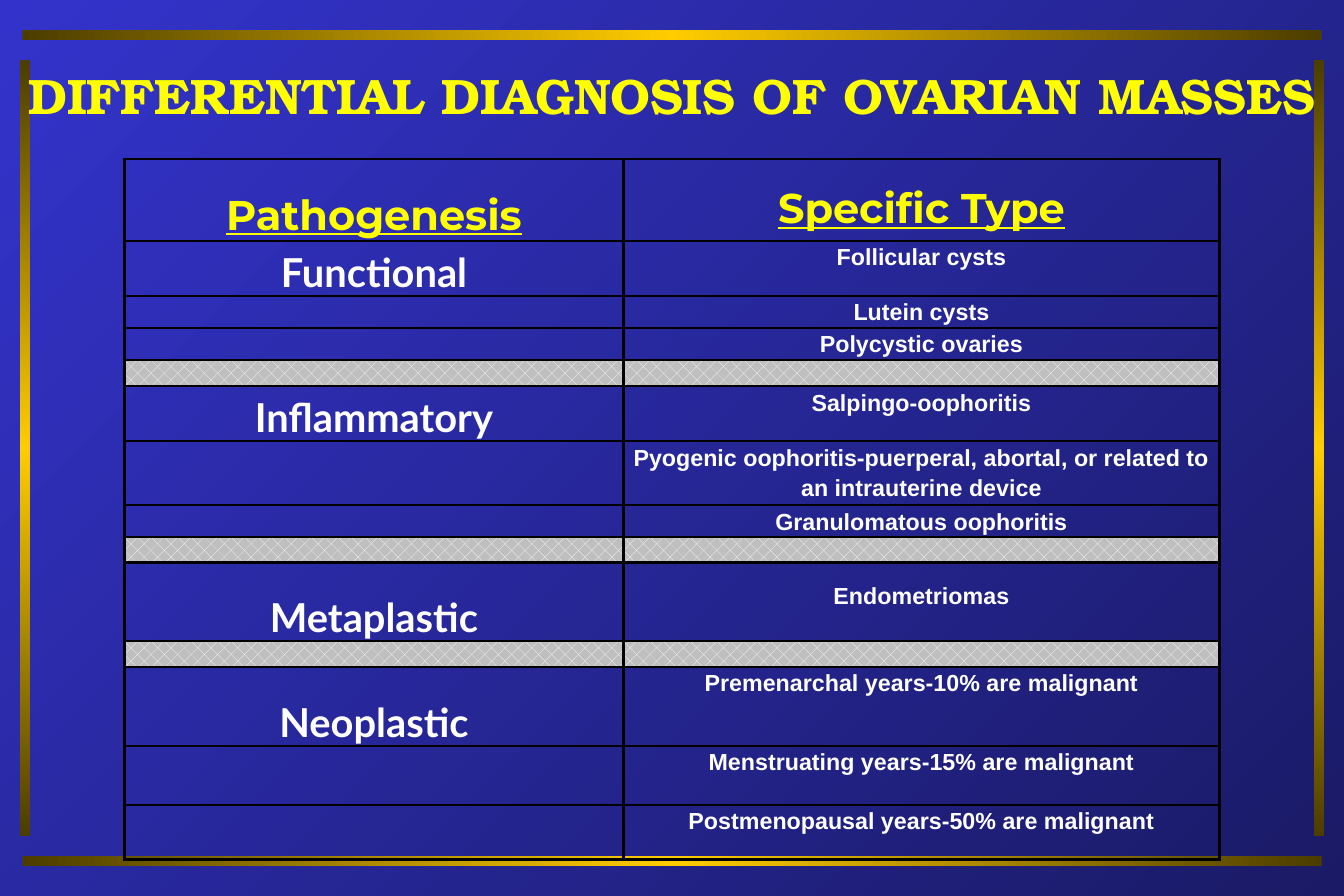
from copy import deepcopy

from lxml import etree
from pptx import Presentation
from pptx import util as u
from pptx.dml.color import RGBColor
from pptx.enum import dml, shapes, text
from pptx.oxml.ns import qn

Pt = u.Pt
YELLOW = RGBColor(0xFF, 0xFF, 0x00)
WHITE = RGBColor(0xFF, 0xFF, 0xFF)
BLACK = RGBColor(0x00, 0x00, 0x00)
SILVER = RGBColor(0xBF, 0xBF, 0xBF)
GOLD = RGBColor(0xFF, 0xCC, 0x00)
BRONZE = RGBColor(0x4C, 0x3D, 0x00)
BLUE = RGBColor(0x33, 0x33, 0xCC)
NAVY = RGBColor(0x1A, 0x1A, 0x66)

WIDTH, HEIGHT = 810, 540
TITLE = {"size": Pt(30), "name": "TeX Gyre Bonum", "bold": True}
HEADING = {"size": Pt(25), "name": "Montserrat", "bold": True, "underline": True}
PATHOGENESIS = {"size": Pt(24), "name": "Lato", "bold": True}
SPECIFIC_TYPE = {"size": Pt(14), "name": "Arial", "bold": True}

LEFT_DROP, RIGHT_DROP = 14.3, 10.5
SEPARATOR = None
# Row height, pathogenesis, its top margin, specific type, its top margin
ROWS = [
    (49.4, "Pathogenesis", LEFT_DROP, "Specific Type", RIGHT_DROP),
    (33.1, "Functional", 0, "Follicular cysts", 0),
    (18.1, "", 0, "Lutein cysts", 0),
    (18.4, "", 0, "Polycystic ovaries", 0),
    (15.7, SEPARATOR, 0, SEPARATOR, 0),
    (33.1, "Inflammatory", 0, "Salpingo-oophoritis", 0),
    (36.5, "", 0, "Pyogenic oophoritis-puerperal, abortal, or related to "
                  "an intrauterine device", 0),
    (18.1, "", 0, "Granulomatous oophoritis", 0),
    (15.3, SEPARATOR, 0, SEPARATOR, 0),
    (47.3, "Metaplastic", LEFT_DROP, "Endometriomas", RIGHT_DROP),
    (15.5, SEPARATOR, 0, SEPARATOR, 0),
    (47.5, "Neoplastic", LEFT_DROP, "Premenarchal years-10% are malignant", 0),
    (35.5, "", 0, "Menstruating years-15% are malignant", 0),
    (33.1, "", 0, "Postmenopausal years-50% are malignant", 0),
]


def set_gradient(fill, element, angle, colors):
    """Spread the colours evenly over a linear gradient."""
    fill.gradient()
    fill.gradient_angle = angle
    stop_list = next(element.iter(qn("a:gsLst")))
    while len(stop_list) < len(colors):
        stop_list.append(deepcopy(stop_list[0]))
    for index, (stop, color) in enumerate(zip(fill.gradient_stops, colors)):
        stop.position = index / (len(colors) - 1)
        stop.color.rgb = color


def write(paragraph, words, style, color):
    paragraph.alignment = text.PP_ALIGN.CENTER
    run = paragraph.add_run()
    run.text = words
    run.font.color.rgb = color
    for name, value in style.items():
        setattr(run.font, name, value)


def add_frame(slide, left, top, width, height):
    """Place four golden bars around the box."""
    thick = 6
    inset = 18
    bars = [
        (left + 1.5, top, width - 3, thick, 0),
        (left + 1.5, top + height - thick, width - 3, thick, 0),
        (left, top + inset, thick, height - 2 * inset, 90),
        (left + width - thick, top + inset, thick, height - 2 * inset, 90),
    ]
    for *box, angle in bars:
        bar = slide.shapes.add_shape(shapes.MSO_SHAPE.RECTANGLE, *map(Pt, box))
        bar.shadow.inherit = False
        bar.line.fill.background()
        set_gradient(bar.fill, bar.element, angle, [BRONZE, GOLD, BRONZE])


def add_title(slide, left, top, width, height):
    box = slide.shapes.add_textbox(Pt(left), Pt(top), Pt(width), Pt(height))
    frame = box.text_frame
    frame.word_wrap = True
    frame.vertical_anchor = text.MSO_ANCHOR.MIDDLE
    write(frame.paragraphs[0], "DIFFERENTIAL DIAGNOSIS OF OVARIAN MASSES", TITLE, YELLOW)


def add_borders(cell):
    properties = cell._tc.get_or_add_tcPr()
    for index, side in enumerate(("lnL", "lnR", "lnT", "lnB")):
        line = etree.Element(qn(f"a:{side}"), w=str(Pt(1.5)))
        solid = etree.SubElement(line, qn("a:solidFill"))
        etree.SubElement(solid, qn("a:srgbClr"), val=str(BLACK))
        properties.insert(index, line)


def fill_cell(cell, words, drop, style, color):
    cell.margin_left = cell.margin_right = Pt(4.5)
    cell.margin_top, cell.margin_bottom = Pt(drop), 0
    paragraph = cell.text_frame.paragraphs[0]
    if words:
        paragraph.line_spacing = 1.15
        write(paragraph, words, style, color)
    else:
        etree.SubElement(paragraph._p, qn("a:endParaRPr"), sz="1000")
    if words is SEPARATOR:
        cell.fill.patterned()
        cell.fill.pattern = dml.MSO_PATTERN.PERCENT_25
        cell.fill.fore_color.rgb = WHITE
        cell.fill.back_color.rgb = SILVER
    else:
        cell.fill.background()
    add_borders(cell)


def add_diagnosis_table(slide, left, top, width):
    height = sum(row[0] for row in ROWS)
    table = slide.shapes.add_table(
        len(ROWS), 2, Pt(left), Pt(top), Pt(width), Pt(height)).table
    table.first_row = table.horz_banding = False
    first_width = 300.8
    table.columns[0].width = Pt(first_width)
    table.columns[1].width = Pt(width - first_width)
    for index, (row_height, group, group_drop, kind, kind_drop) in enumerate(ROWS):
        table.rows[index].height = Pt(row_height)
        header = index == 0
        color = YELLOW if header else WHITE
        fill_cell(table.cell(index, 0), group, group_drop,
                  HEADING if header else PATHOGENESIS, color)
        fill_cell(table.cell(index, 1), kind, kind_drop,
                  HEADING if header else SPECIFIC_TYPE, color)


def main():
    presentation = Presentation()
    presentation.slide_width, presentation.slide_height = Pt(WIDTH), Pt(HEIGHT)
    slide = presentation.slides.add_slide(presentation.slide_layouts[6])
    set_gradient(slide.background.fill, slide.element, 315, [BLUE, NAVY])
    add_frame(slide, 12, 18, WIDTH - 24, HEIGHT - 36)
    add_title(slide, 0, 30, WIDTH, 54)
    add_diagnosis_table(slide, 75, 95.8, 660)
    presentation.save("out.pptx")


if __name__ == "__main__":
    main()
